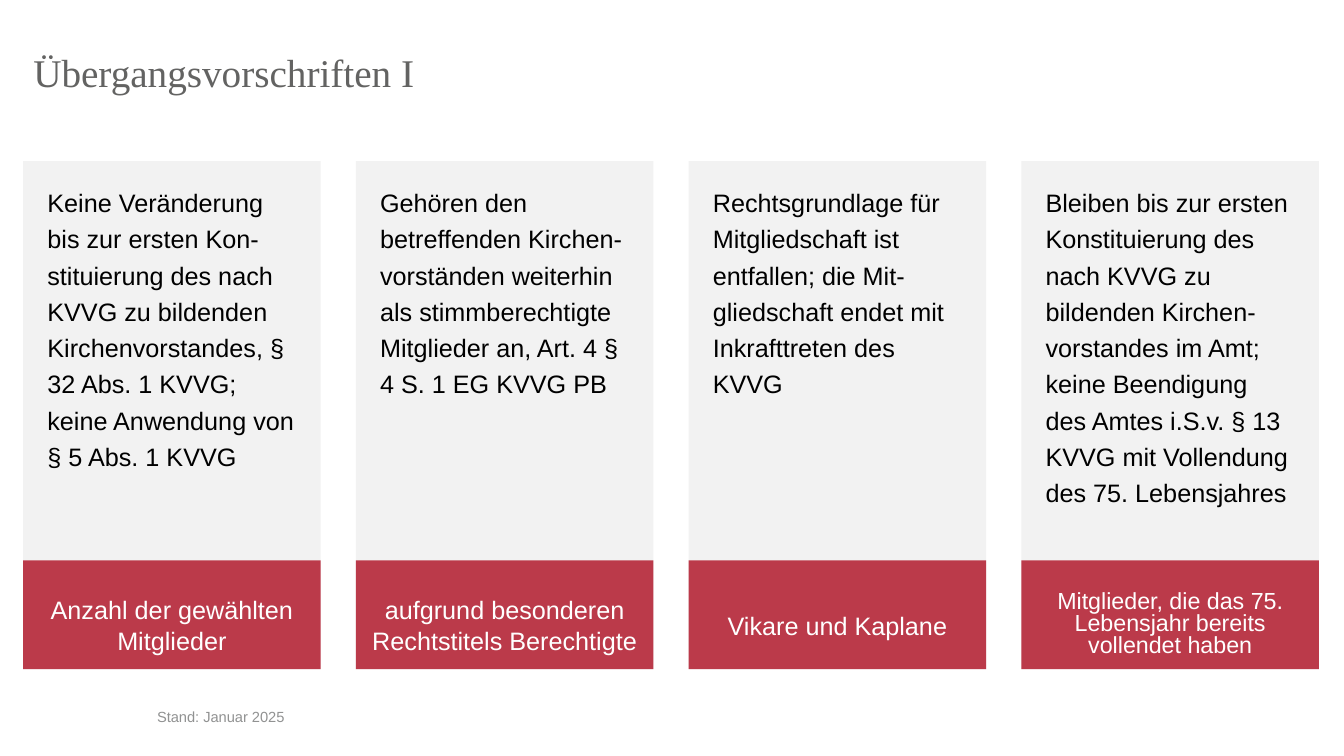
from lxml import etree
from pptx import Presentation
from pptx.dml.color import RGBColor
from pptx.enum import shapes, text
from pptx.oxml import ns
from pptx.util import Inches, Pt

WHITE = RGBColor(0xFF, 0xFF, 0xFF)
BLACK = RGBColor(0, 0, 0)
PALE = RGBColor(0xF2, 0xF2, 0xF2)
RED = RGBColor(0xAE, 0x0C, 0x21)
SLATE = RGBColor(0x63, 0x63, 0x62)
GREY = RGBColor(0x91, 0x92, 0x92)

LEFT, STEP, WIDE = 0.23, 3.3, 2.95
CARDS = [
    ("Keine Veränderung bis zur ersten Kon-stituierung des nach KVVG zu bildenden "
     "Kirchenvorstandes, § 32 Abs. 1 KVVG; keine Anwendung von § 5 Abs. 1 KVVG",
     "Anzahl der gewählten Mitglieder", 18, 1),
    ("Gehören den betreffenden Kirchen-vorständen weiterhin als stimmberechtigte "
     "Mitglieder an, Art. 4 § 4 S. 1 EG KVVG PB",
     "aufgrund besonderen Rechtstitels Berechtigte", 18, 1),
    ("Rechtsgrundlage für Mitgliedschaft ist entfallen; die Mit-gliedschaft endet "
     "mit Inkrafttreten des KVVG",
     "Vikare und Kaplane", 18, 1),
    ("Bleiben bis zur ersten Konstituierung des nach KVVG zu bildenden "
     "Kirchen-vorstandes im Amt; keine Beendigung des Amtes i.S.v. § 13 KVVG "
     "mit Vollendung des 75. Lebensjahres",
     "Mitglieder, die das 75. Lebensjahr bereits vollendet haben", 16.6, 0.8),
]


class Deck:
    """Hold the fonts and the current slide, and add its elements."""

    def __init__(self, slide):
        self.slide = slide
        self.head = "Times New Roman"
        self.sans = "Arial"

    def letter(self, shape, words, size, color, font, align, anchor, pads, line=1):
        frame = shape.text_frame
        frame.word_wrap = True
        frame.auto_size = text.MSO_AUTO_SIZE.NONE
        frame.vertical_anchor = anchor
        (frame.margin_left, frame.margin_top,
         frame.margin_right, frame.margin_bottom) = map(Inches, pads)
        para = frame.paragraphs[0]
        para.text = words
        para.alignment = align
        para.line_spacing = line
        para.font.size = Pt(size)
        para.font.name = font
        para.font.color.rgb = color

    def title(self, words):
        shape = self.slide.shapes.title
        shape.left, shape.top = Inches(0.23), Inches(0.23)
        shape.width, shape.height = Inches(11.13), Inches(1.03)
        self.letter(shape, words, 28, SLATE, self.head, text.PP_ALIGN.LEFT,
                    text.MSO_ANCHOR.MIDDLE, (0.1, 0.05, 0.1, 0.05), 0.9)

    def block(self, left, top, height, color):
        shape = self.slide.shapes.add_shape(
            shapes.MSO_SHAPE.RECTANGLE, Inches(left), Inches(top),
            Inches(WIDE), Inches(height))
        shape.shadow.inherit = False
        shape.fill.solid()
        shape.fill.fore_color.rgb = color
        shape.line.fill.background()
        return shape

    def card(self, left, words):
        self.letter(self.block(left, 1.6, 5.04, PALE), words, 18, BLACK, self.sans,
                    text.PP_ALIGN.LEFT, text.MSO_ANCHOR.TOP,
                    (0.24, 0.2, 0.24, 0.2), 1.2)

    def label(self, left, words, size, line):
        shape = self.block(left, 5.56, 1.08, RED)
        tint = shape.element.spPr.find(".//" + ns.qn("a:srgbClr"))
        etree.SubElement(tint, ns.qn("a:alpha"), val="80000")
        self.letter(shape, words, size, WHITE, self.sans, text.PP_ALIGN.CENTER,
                    text.MSO_ANCHOR.MIDDLE, (0.08, 0.28, 0.08, 0.08), line)

    def note(self, words):
        shape = self.slide.shapes.add_textbox(
            Inches(1.46), Inches(6.91), Inches(11.64), Inches(0.34))
        self.letter(shape, words, 10.5, GREY, self.sans, text.PP_ALIGN.LEFT,
                    text.MSO_ANCHOR.BOTTOM, (0.1, 0.05, 0.1, 0.05))


def main():
    show = Presentation()
    show.slide_width, show.slide_height = Inches(13.33), Inches(7.5)
    deck = Deck(show.slides.add_slide(show.slide_layouts[5]))
    deck.title("Übergangsvorschriften I")
    for col, (words, name, size, line) in enumerate(CARDS):
        left = LEFT + col * STEP
        deck.card(left, words)
        deck.label(left, name, size, line)
    deck.note("Stand: Januar 2025")
    show.save("out.pptx")


if __name__ == "__main__":
    main()
